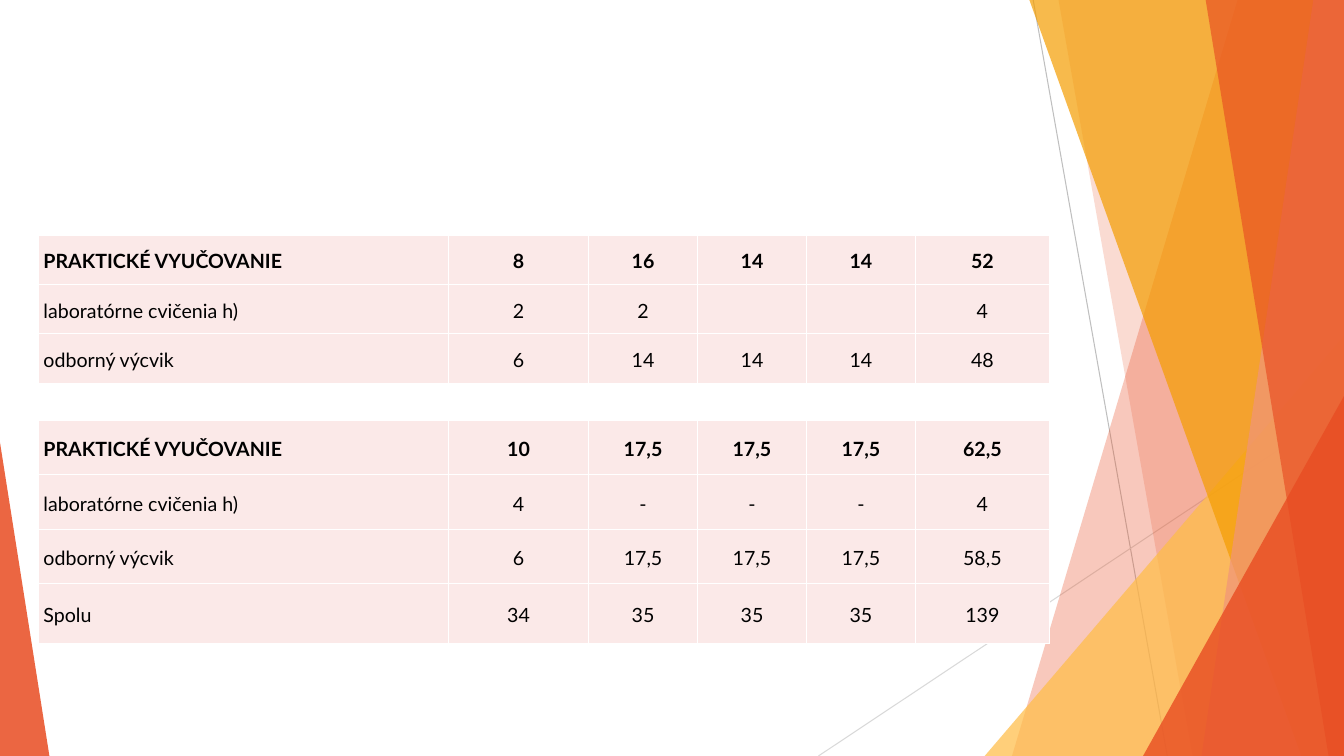
from dataclasses import dataclass
from lxml.etree import SubElement
from pptx import Presentation
from pptx.dml.color import RGBColor
from pptx.enum.shapes import MSO_CONNECTOR, MSO_SHAPE
from pptx.enum.text import MSO_ANCHOR, PP_ALIGN
from pptx.oxml import parse_xml
from pptx.oxml.ns import nsdecls, qn
from pptx.util import Pt


@dataclass(frozen=True)
class Theme:
    red: str = "E84C22"
    salmon: str = "F1947A"
    amber: str = "F49D00"
    gold: str = "FFBD47"
    gray: str = "BFBFBF"
    pale: str = "D9D9D9"
    cell: str = "FBE9E8"
    rule: str = "FFFFFF"
    ink: str = "000000"
    font: str = "Lato"
    size: int = 14


theme = Theme()
wide, high, top = 960, 540, -0.6

deck = Presentation()
deck.slide_width, deck.slide_height = Pt(wide), Pt(high)
slide = deck.slides.add_slide(deck.slide_layouts[6])
shapes = slide.shapes


def tint(shape, color, alpha):
    """Fill a shape with a see-through colour, without line or shadow."""
    shape.shadow.inherit = False
    shape.line.fill.background()
    shape.fill.solid()
    shape.fill.fore_color.rgb = RGBColor.from_string(color)
    tag = shape.fill._xPr.find(qn("a:solidFill"))[0]
    SubElement(tag, qn("a:alpha"), val=str(alpha * 1000))


# Thin lines behind the bands
for x1, y1, x2, y2, color in [
    (738, 0, 833.8, high, theme.gray),
    (wide, 290.2, 584.6, high, theme.pale),
]:
    line = shapes.add_connector(
        MSO_CONNECTOR.STRAIGHT, Pt(x1), Pt(y1), Pt(x2), Pt(y2))
    line.line.color.rgb = RGBColor.from_string(color)
    line.line.width = Pt(0.75)
    SubElement(line._element.spPr, qn("a:effectLst"))

# Bands run to the right edge: (top x, foot x, colour, alpha)
# Wedges rise from the foot: (left, top, width, apex, colour, alpha)
bands = [
    (884.2, 722.9, theme.red, 30),
    (756, 851.8, theme.red, 20),
    (703.4, 239.8, 256.6, 1, theme.gold, 72),
    (735.1, 929.5, theme.amber, 70),
    (938.2, 858.2, theme.salmon, 70),
    (861.1, 949, theme.red, 65),
    (816.5, 283, 143.5, 1, theme.red, 80),
    (0, 316.1, 35.3, 0, theme.red, 85),
]
for *place, color, alpha in bands:
    if len(place) == 2:
        head, foot = place
        path = shapes.build_freeform(Pt(head), Pt(top))
        path.add_line_segments([
            (Pt(wide), Pt(top)), (Pt(wide), Pt(high)), (Pt(foot), Pt(high))])
        shape = path.convert_to_shape()
    else:
        left, peak, width, apex = place
        shape = shapes.add_shape(
            MSO_SHAPE.ISOSCELES_TRIANGLE,
            Pt(left), Pt(peak), Pt(width), Pt(high - peak))
        shape.adjustments[0] = apex
    tint(shape, color, alpha)

# Tables of weekly hours: (top, row heights, rows)
cols = [293, 100.1, 77.8, 77.8, 77.8, 95.8]
tables = [
    (300.2, [38.9, 38.9, 38.9, 42.5], [
        ["PRAKTICKÉ VYUČOVANIE", "10", "17,5", "17,5", "17,5", "62,5"],
        ["laboratórne cvičenia h)", "4", "-", "-", "-", "4"],
        ["odborný výcvik", "6", "17,5", "17,5", "17,5", "58,5"],
        ["Spolu", "34", "35", "35", "35", "139"],
    ]),
    (167.8, [35.3] * 3, [
        ["PRAKTICKÉ VYUČOVANIE", "8", "16", "14", "14", "52"],
        ["laboratórne cvičenia h)", "2", "2", "", "", "4"],
        ["odborný výcvik", "6", "14", "14", "14", "48"],
    ]),
]
for y, sizes, rows in tables:
    table = shapes.add_table(
        len(rows), len(cols), Pt(27.4), Pt(y),
        Pt(sum(cols)), Pt(sum(sizes))).table
    table.first_row = table.horz_banding = False
    for col, width in zip(table.columns, cols):
        col.width = Pt(width)
    for r, (row, size) in enumerate(zip(rows, sizes)):
        table.rows[r].height = Pt(size)
        for c, text in enumerate(row):
            cell = table.cell(r, c)
            cell.fill.solid()
            cell.fill.fore_color.rgb = RGBColor.from_string(theme.cell)
            cell.vertical_anchor = MSO_ANCHOR.MIDDLE
            cell.margin_left = cell.margin_right = Pt(3.6)
            cell.margin_top = cell.margin_bottom = 0
            # White rules on all four sides
            for i, side in enumerate("LRTB"):
                cell._tc.tcPr.insert(i, parse_xml(
                    f'<a:ln{side} {nsdecls("a")} w="{Pt(1)}"><a:solidFill>'
                    f'<a:srgbClr val="{theme.rule}"/>'
                    f'</a:solidFill></a:ln{side}>'))
            if not text:
                continue
            para = cell.text_frame.paragraphs[0]
            para.line_spacing = 1.15
            para.alignment = PP_ALIGN.CENTER if c else PP_ALIGN.LEFT
            run = para.add_run()
            run.text = text
            run.font.name = theme.font
            run.font.size = Pt(theme.size)
            run.font.bold = r == 0
            run.font.color.rgb = RGBColor.from_string(theme.ink)

deck.save("out.pptx")
